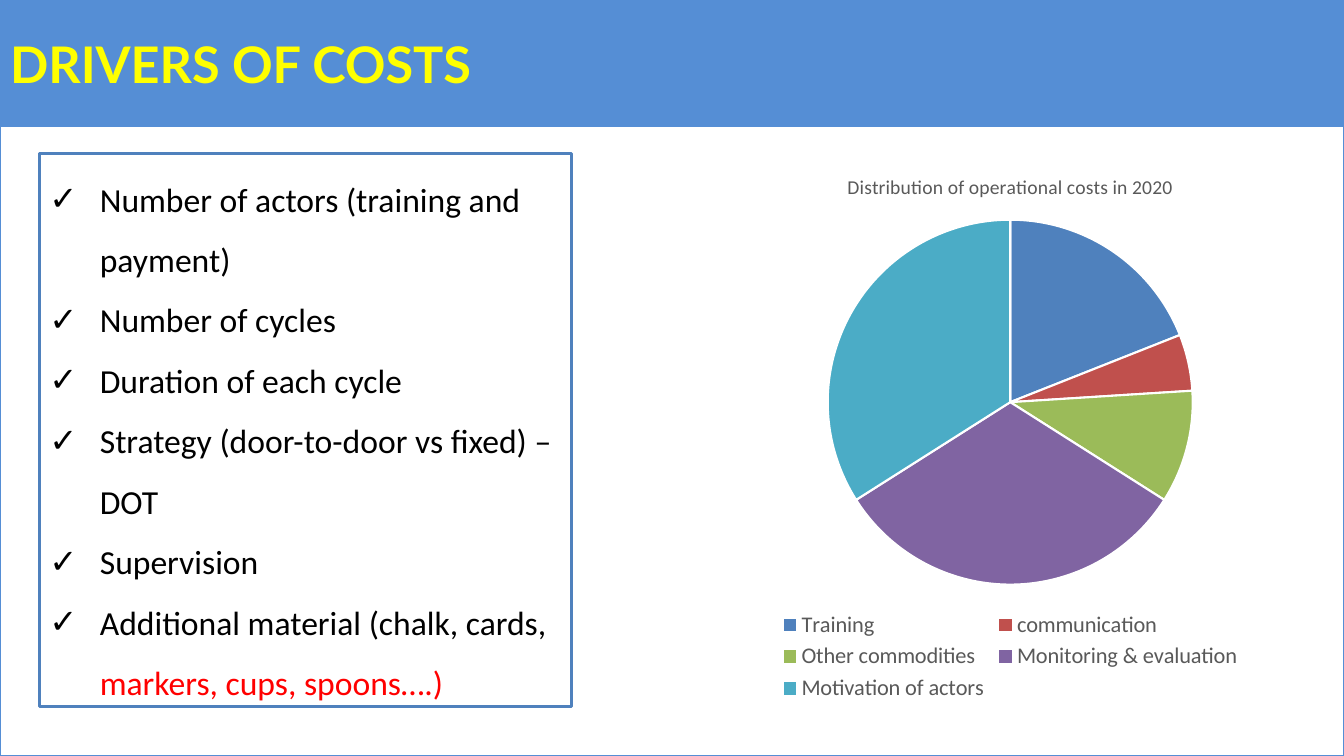
from pptx import Presentation
from pptx import util as u
from pptx.chart.data import CategoryChartData
from pptx.dml.color import RGBColor
from pptx.enum import chart as charts, shapes, text
from pptx.oxml import parse_xml
from pptx.oxml.ns import nsdecls

BLUE, BORDER, YELLOW = "558ED5", "4F81BD", "FFFF00"
BLACK, RED, GREY, WHITE = "000000", "FF0000", "595959", "FFFFFF"

DRIVERS = [
    [("Number of actors (training and payment)", BLACK)],
    [("Number of cycles", BLACK)],
    [("Duration of each cycle", BLACK)],
    [("Strategy (door-to-door vs fixed) – DOT", BLACK)],
    [("Supervision", BLACK)],
    [("Additional material (chalk, cards, ", BLACK),
     ("markers, cups, spoons….)", RED)],
]
COSTS = {
    "Training": (19, "4F81BD"),
    "communication": (5, "C0504D"),
    "Other commodities": (10, "9BBB59"),
    "Monitoring & evaluation": (32, "8064A2"),
    "Motivation of actors": (34, "4BACC6"),
}


def rgb(value):
    return RGBColor.from_string(value)


def style_font(font, size, color, name="Calibri", bold=False):
    font.size, font.name, font.bold = u.Pt(size), name, bold
    font.color.rgb = rgb(color)


def add_span(para, words, **style):
    """Append a run to the paragraph, formatted by the keyword arguments."""
    span = para.add_run()
    span.text = words
    style_font(span.font, **style)


def place(shape, left, top, width, height):
    shape.left, shape.top = u.Inches(left), u.Inches(top)
    shape.width, shape.height = u.Inches(width), u.Inches(height)


def outline(shape, color, width):
    shape.line.color.rgb = rgb(color)
    shape.line.width = u.Pt(width)


class CostPage:
    """Holds the slide and draws each kind of element on it."""

    def __init__(self, deck):
        self.page = deck.slides.add_slide(deck.slide_layouts[1])
        self.page.background.fill.solid()
        self.page.background.fill.fore_color.rgb = rgb(WHITE)

    def frame(self, *area):
        box = self.page.shapes.add_shape(
            shapes.MSO_SHAPE.RECTANGLE, *map(u.Inches, area))
        box.shadow.inherit = False
        box.fill.background()
        outline(box, BLUE, 2)
        # The frame lies behind the placeholders.
        self.page.shapes._spTree.insert(2, box._element)

    def title(self, words, *area):
        box = self.page.shapes.title
        place(box, *area)
        box.fill.solid()
        box.fill.fore_color.rgb = rgb(BLUE)
        outline(box, BLUE, 0.75)
        box.text_frame.vertical_anchor = text.MSO_ANCHOR.MIDDLE
        para = box.text_frame.paragraphs[0]
        para.alignment = text.PP_ALIGN.LEFT
        add_span(para, words, size=36, color=YELLOW, name="Lato", bold=True)

    def checklist(self, items, *area):
        box = self.page.placeholders[1]
        place(box, *area)
        outline(box, BORDER, 2.25)
        frame = box.text_frame
        frame.word_wrap = True
        frame.auto_size = text.MSO_AUTO_SIZE.NONE
        for index, spans in enumerate(items):
            para = frame.add_paragraph() if index else frame.paragraphs[0]
            para.line_spacing = 1.5
            para.space_before = u.Pt(0)
            props = para._p.get_or_add_pPr()
            props.set("marL", str(u.Inches(0.5)))
            props.set("indent", str(-u.Inches(0.5)))
            props.append(parse_xml(f'<a:buChar {nsdecls("a")} char="✓"/>'))
            for words, color in spans:
                add_span(para, words, size=24, color=color)

    def pie(self, heading, costs, *area):
        data = CategoryChartData()
        data.categories = list(costs)
        data.add_series("Series 1", [value for value, _ in costs.values()])
        chart = self.page.shapes.add_chart(
            charts.XL_CHART_TYPE.PIE, *map(u.Inches, area), data).chart
        style_font(chart.font, 10, BLACK)
        chart.has_title = True
        add_span(chart.chart_title.text_frame.paragraphs[0], heading,
                 size=14, color=GREY)
        chart.has_legend = True
        chart.legend.position = charts.XL_LEGEND_POSITION.BOTTOM
        chart.legend.include_in_layout = False
        style_font(chart.legend.font, 16, GREY)
        plot = chart.plots[0]
        plot.vary_by_categories = True
        for index, (_, color) in enumerate(costs.values()):
            point = plot.series[0].points[index].format
            point.fill.solid()
            point.fill.fore_color.rgb = rgb(color)
            outline(point, WHITE, 1.5)
        self.fix_plot_area(chart, x=0.19, y=0.12, w=0.62, h=0.66)

    @staticmethod
    def fix_plot_area(chart, **shares):
        """Place the plot by shares of the chart's width and height."""
        parts = "".join(f'<c:{key} val="{share}"/>'
                        for key, share in shares.items())
        area = chart._chartSpace.chart.plotArea
        for layout in area.findall(area.tag.replace("plotArea", "layout")):
            area.remove(layout)
        area.insert(0, parse_xml(
            f'<c:layout {nsdecls("c")}><c:manualLayout>'
            '<c:layoutTarget val="inner"/>'
            '<c:xMode val="edge"/><c:yMode val="edge"/>'
            f'{parts}</c:manualLayout></c:layout>'))


def main():
    deck = Presentation()
    deck.slide_width, deck.slide_height = u.Inches(13.33), u.Inches(7.5)
    page = CostPage(deck)
    page.frame(0, 0, 13.33, 7.5)
    page.title("DRIVERS OF COSTS", 0, 0, 13.33, 1.26)
    page.checklist(DRIVERS, 0.39, 1.52, 5.28, 5.49)
    page.pie("Distribution of operational costs in 2020", COSTS,
             7.1, 1.52, 5.84, 5.49)
    deck.save("out.pptx")


if __name__ == "__main__":
    main()
